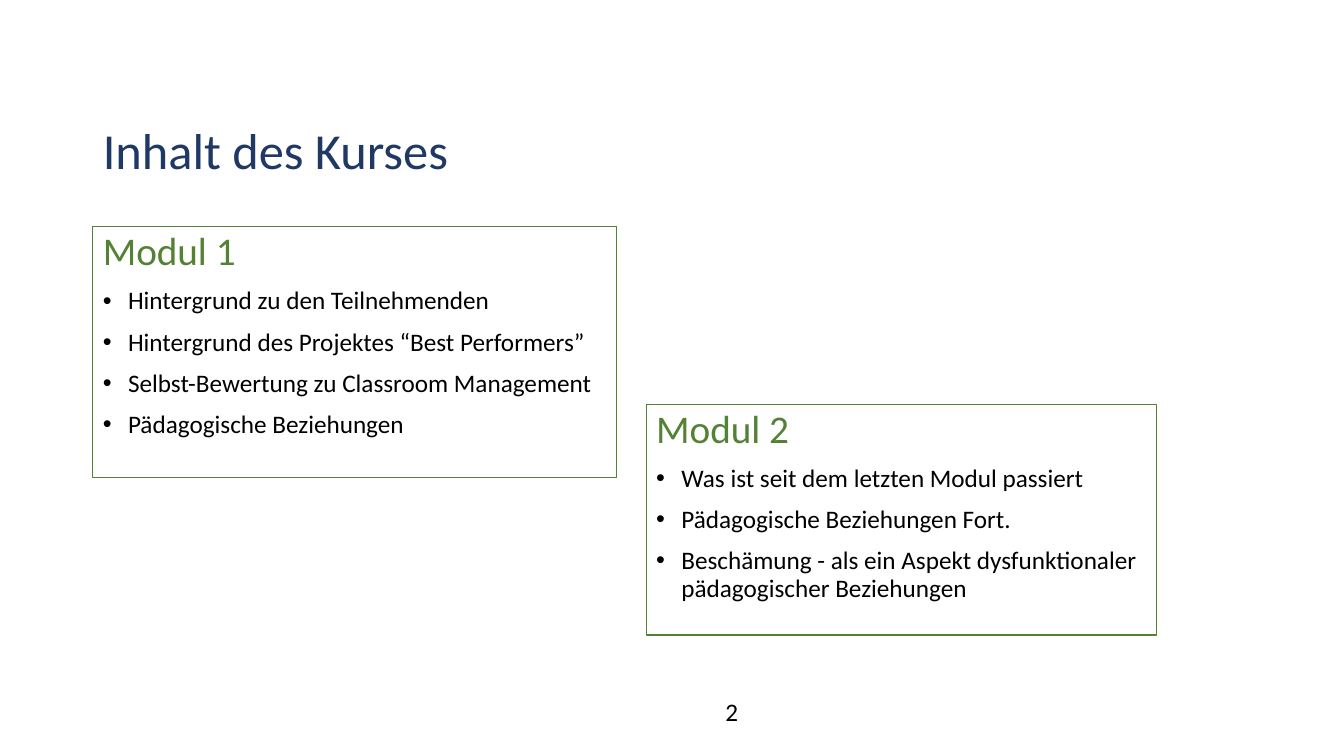
from lxml import etree
from pptx import Presentation
from pptx.dml.color import RGBColor
from pptx.enum import text as t
from pptx.oxml import ns
from pptx.util import Pt

TITLE = "Inhalt des Kurses"
PAGE = "2"
MODULES = [
    ("Modul 1", (66.24, 162, 374.4, 179.28), [
        "Hintergrund zu den Teilnehmenden",
        "Hintergrund des Projektes “Best Performers”",
        "Selbst-Bewertung zu Classroom Management",
        "Pädagogische Beziehungen",
    ]),
    ("Modul 2", (461.52, 288.72, 364.32, 164.88), [
        "Was ist seit dem letzten Modul passiert",
        "Pädagogische Beziehungen Fort.",
        "Beschämung - als ein Aspekt dysfunktionaler pädagogischer Beziehungen",
    ]),
]
TITLE_BOX = (66.24, 86.4, 828, 69.84)
PAGE_BOX = (414.72, 493.92, 216, 28.8)
FONT = "Calibri"
NAVY = RGBColor(0x20, 0x38, 0x64)
GREEN = RGBColor(0x54, 0x82, 0x35)
BLACK = RGBColor(0, 0, 0)
INDENT = 18


def place(shape, box):
    shape.left, shape.top, shape.width, shape.height = map(Pt, box)
    frame = shape.text_frame
    frame.word_wrap = True
    frame.auto_size = t.MSO_AUTO_SIZE.NONE
    frame.vertical_anchor = t.MSO_ANCHOR.TOP
    return frame


def write(para, words, size, color, align=t.PP_ALIGN.LEFT, lines=0.9, before=0):
    para.alignment = align
    para.line_spacing = lines
    para.space_before = Pt(before)
    run = para.add_run()
    run.text = words
    run.font.name = FONT
    run.font.size = Pt(size)
    run.font.color.rgb = color


def mark(para, char=None):
    """Give the paragraph a hanging bullet, or none at all."""
    props = para._p.get_or_add_pPr()
    hang = Pt(INDENT) if char else 0
    props.set("marL", str(hang))
    props.set("indent", str(-hang))
    if char:
        etree.SubElement(props, ns.qn("a:buFont")).set("typeface", "Arial")
        etree.SubElement(props, ns.qn("a:buChar")).set("char", char)
    else:
        etree.SubElement(props, ns.qn("a:buNone"))


def main():
    deck = Presentation()
    deck.slide_width, deck.slide_height = Pt(960), Pt(540)
    slide = deck.slides.add_slide(deck.slide_layouts.get_by_name("Two Content"))
    title, *bodies = slide.placeholders

    write(place(title, TITLE_BOX).paragraphs[0], TITLE, 36, NAVY)

    for body, (head, box, items) in zip(bodies, MODULES):
        frame = place(body, box)
        body.line.color.rgb = GREEN
        body.line.width = Pt(0.75)
        first = frame.paragraphs[0]
        mark(first)
        write(first, head, 28, GREEN)
        for item in items:
            para = frame.add_paragraph()
            mark(para, "•")
            write(para, item, 18, BLACK, before=10)

    page = slide.shapes.add_textbox(0, 0, 0, 0)
    write(place(page, PAGE_BOX).paragraphs[0], PAGE, 18, BLACK,
          t.PP_ALIGN.CENTER, lines=1.0)
    deck.save("out.pptx")


if __name__ == "__main__":
    main()
